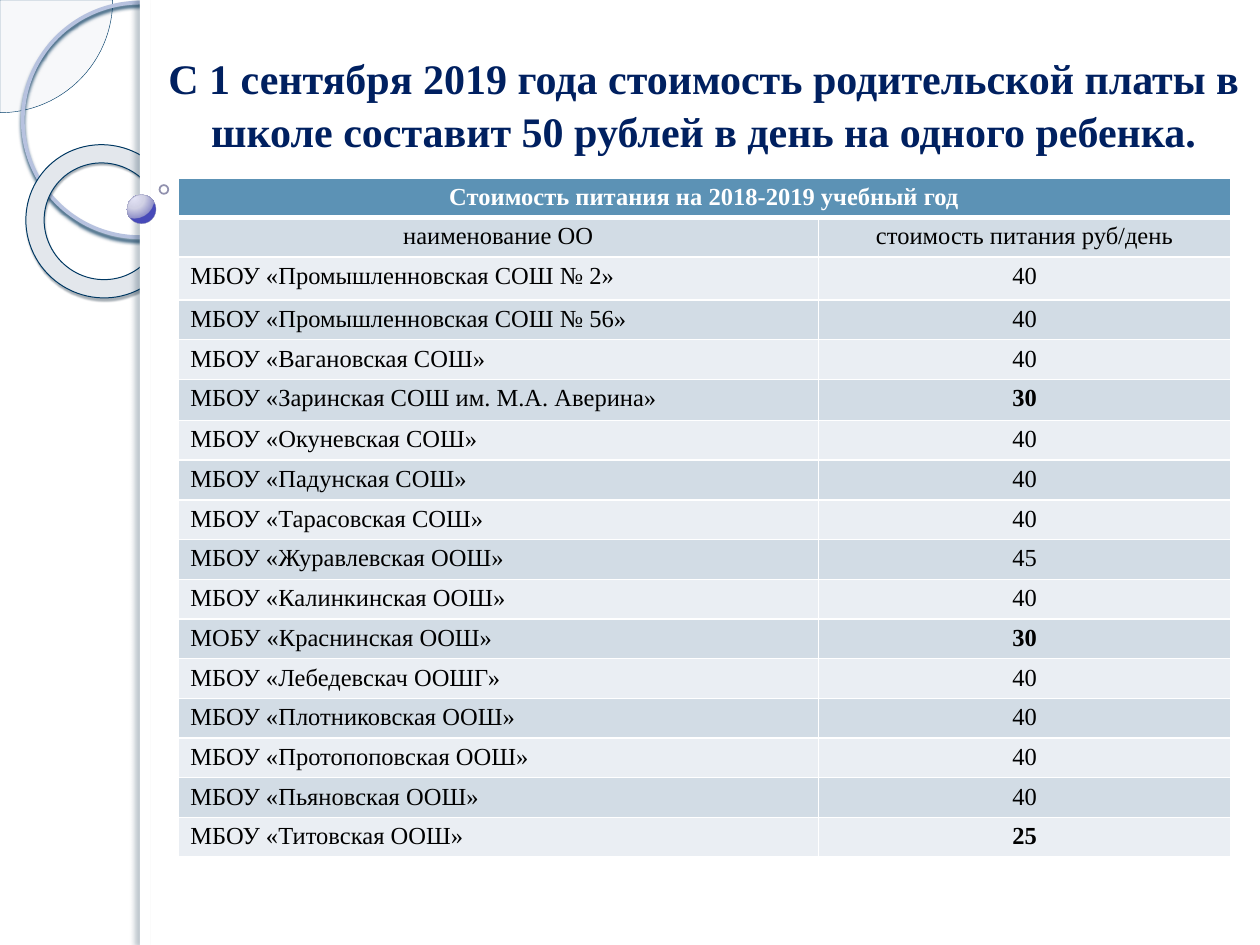
from lxml import etree
from pptx import Presentation
from pptx.dml.color import RGBColor
from pptx.enum.shapes import MSO_SHAPE
from pptx.enum.text import MSO_ANCHOR, MSO_AUTO_SIZE, PP_ALIGN
from pptx.oxml import parse_xml
from pptx.oxml.ns import nsdecls, qn
from pptx.util import Pt

PIE, OVAL = MSO_SHAPE.PIE, MSO_SHAPE.OVAL
DONUT, RECT = MSO_SHAPE.DONUT, MSO_SHAPE.RECTANGLE
LEFT, CENTER = PP_ALIGN.LEFT, PP_ALIGN.CENTER
TOP = MSO_ANCHOR.TOP
NO_FIT = MSO_AUTO_SIZE.NONE

COLORS = {
    "white": "FFFFFF", "black": "000000", "title": "002060",
    "header": "5C92B5", "band": "D2DCE5", "light": "EAEEF3",
    "pie": "F7F8FA", "pie_line": "003C68",
    "ring": "B7C2DF", "ring_shadow": "00345A",
    "donut": "E3E7EC", "donut_line": "003862", "donut_shadow": "001A2D",
    "edge_shadow": "00233D", "ball_line": "9495B6", "dot_line": "9292AF",
}
BALL_STOPS = [(0, "E2E2F5"), (50, "D1D1E5"), (95, "9495CB"), (100, "474AB9")]
TITLE = ("С 1 сентября 2019 года стоимость родительской платы в школе "
         "составит 50 рублей в день на одного ребенка.")
HEADER = "Стоимость питания на 2018-2019 учебный год"
ROWS = [
    ("наименование ОО", "стоимость питания руб/день"),
    ("МБОУ «Промышленновская СОШ № 2»", "40"),
    ("МБОУ «Промышленновская СОШ № 56»", "40"),
    ("МБОУ «Вагановская СОШ»", "40"),
    ("МБОУ «Заринская СОШ им. М.А. Аверина»", "30"),
    ("МБОУ «Окуневская СОШ»", "40"),
    ("МБОУ «Падунская СОШ»", "40"),
    ("МБОУ «Тарасовская СОШ»", "40"),
    ("МБОУ «Журавлевская ООШ»", "45"),
    ("МБОУ «Калинкинская ООШ»", "40"),
    ("МОБУ «Краснинская ООШ»", "30"),
    ("МБОУ «Лебедевскач ООШГ»", "40"),
    ("МБОУ «Плотниковская ООШ»", "40"),
    ("МБОУ «Протопоповская ООШ»", "40"),
    ("МБОУ «Пьяновская ООШ»", "40"),
    ("МБОУ «Титовская ООШ»", "25"),
]
BOLD_VALUES = {"30", "25"}
ROW_HEIGHT = 22.7
TALL_ROWS = {2: 24.5, 5: 23.5}


class Deck:
    """Holds the style and the current slide."""

    font = "Times New Roman"

    def __init__(self, prs):
        self.s = prs.slides.add_slide(prs.slide_layouts[5])

    def color(self, name):
        return RGBColor.from_string(COLORS[name])

    def put_text(self, tf, text, size, color, bold, align):
        p = tf.paragraphs[0]
        p.text = text
        p.alignment = align
        p.font.name = self.font
        p.font.size = Pt(size)
        p.font.bold = bold
        p.font.color.rgb = self.color(color)
        return p

    def shape(self, kind, x, y, w, h, fill=None, line=None, width=1):
        sp = self.s.shapes.add_shape(kind, Pt(x), Pt(y), Pt(w), Pt(h))
        sp.shadow.inherit = False
        if fill:
            sp.fill.solid()
            sp.fill.fore_color.rgb = self.color(fill)
        else:
            sp.fill.background()
        if line:
            sp.line.color.rgb = self.color(line)
            sp.line.width = Pt(width)
        else:
            sp.line.fill.background()
        return sp

    def shadow(self, sp, color, alpha, blur, dist, angle):
        effects = sp._element.spPr.find(qn("a:effectLst"))
        effects.append(parse_xml(
            f'<a:outerShdw {nsdecls("a")} blurRad="{Pt(blur)}" dist="{Pt(dist)}" '
            f'dir="{angle * 60000}" algn="ctr" rotWithShape="0">'
            f'<a:srgbClr val="{COLORS[color]}"><a:alpha val="{alpha * 1000}"/>'
            '</a:srgbClr></a:outerShdw>'))

    def radial(self, sp, stops):
        gs = "".join(f'<a:gs pos="{pos * 1000}"><a:srgbClr val="{c}"/></a:gs>'
                     for pos, c in stops)
        spPr = sp._element.spPr
        spPr.replace(spPr.find(qn("a:noFill")), parse_xml(
            f'<a:gradFill {nsdecls("a")} rotWithShape="1"><a:gsLst>{gs}</a:gsLst>'
            '<a:path path="circle"><a:fillToRect l="25000" t="12000" '
            'r="75000" b="88000"/></a:path></a:gradFill>'))

    def title(self, text, x, y, w, h):
        sp = self.s.shapes.title
        self.s.shapes._spTree.append(sp._element)
        sp.left, sp.top, sp.width, sp.height = Pt(x), Pt(y), Pt(w), Pt(h)
        tf = sp.text_frame
        tf.word_wrap = True
        tf.auto_size = NO_FIT
        tf.vertical_anchor = TOP
        p = self.put_text(tf, text, 24, "title", True, CENTER)
        p.line_spacing = 1.05
        p.space_before = Pt(0)

    def cell(self, cell, text, fill, color, bold, align, bottom=1):
        tcPr = cell._tc.get_or_add_tcPr()
        for side, width in (("L", 1), ("R", 1), ("T", 1), ("B", bottom)):
            ln = etree.SubElement(tcPr, qn(f"a:ln{side}"), w=str(Pt(width)))
            solid = etree.SubElement(ln, qn("a:solidFill"))
            etree.SubElement(solid, qn("a:srgbClr"), val=COLORS["white"])
        cell.fill.solid()
        cell.fill.fore_color.rgb = self.color(fill)
        cell.margin_top = cell.margin_bottom = Pt(3.2)
        self.put_text(cell.text_frame, text, 14, color, bold, align)

    def table(self, header, rows, x, y, widths):
        heights = [TALL_ROWS.get(i, ROW_HEIGHT) for i in range(len(rows) + 1)]
        table = self.s.shapes.add_table(
            len(heights), len(widths), Pt(x), Pt(y),
            Pt(sum(widths)), Pt(sum(heights))).table
        table.horz_banding = False
        for column, width in zip(table.columns, widths):
            column.width = Pt(width)
        for row, height in zip(table.rows, heights):
            row.height = Pt(height)
        table.cell(0, 0).merge(table.cell(0, 1))
        self.cell(table.cell(0, 0), header, "header", "white", True, CENTER, 3)
        for i, row in enumerate(rows, 1):
            fill = "band" if i % 2 else "light"
            for j, text in enumerate(row):
                align = LEFT if j == 0 and i > 1 else CENTER
                self.cell(table.cell(i, j), text, fill, "black",
                          text in BOLD_VALUES, align)


def main():
    prs = Presentation()
    prs.slide_width, prs.slide_height = Pt(720), Pt(540)
    deck = Deck(prs)

    pie = deck.shape(PIE, -64.4, -64.4, 128.8, 128.8, "pie", "pie_line", 0.25)
    pie.adjustments[0], pie.adjustments[1] = 0, 54
    ring = deck.shape(OVAL, 13, 1.5, 134, 134, None, "ring", 2.15)
    deck.shadow(ring, "ring_shadow", 85, 2, 2, 90)
    donut = deck.shape(DONUT, 14.5, 83, 88.5, 87, "donut", "donut_line", 0.58)
    donut.adjustments[0] = 0.12
    donut.rotation = 38.6
    deck.shadow(donut, "donut_shadow", 35, 1, 1.2, 75)

    deck.shape(RECT, 80, 0, 640, 540, "white")
    edge = deck.shape(RECT, 80, 0, 5.8, 540, "white")
    deck.shadow(edge, "edge_shadow", 25, 3, 3, 180)
    ball = deck.shape(OVAL, 72.6, 111.3, 16.6, 16.6, None, "ball_line", 0.16)
    deck.radial(ball, BALL_STOPS)
    deck.shape(OVAL, 91.2, 105.8, 5, 5, None, "dot_line", 1)

    deck.title(TITLE, 84.2, 25, 635.8, 66)
    deck.table(HEADER, ROWS, 101.6, 101.6, (366.2, 235.4))
    prs.save("out.pptx")


if __name__ == "__main__":
    main()
